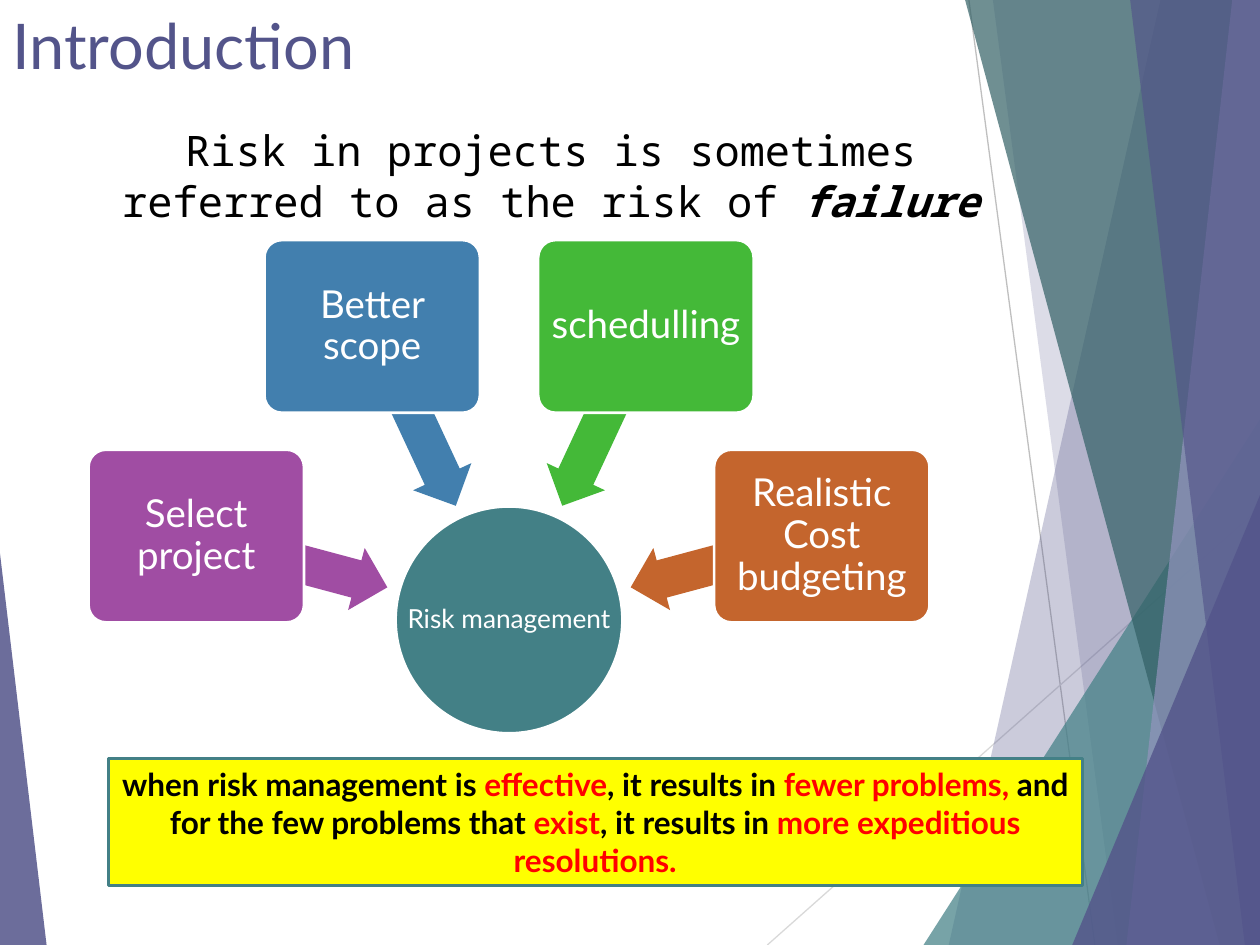
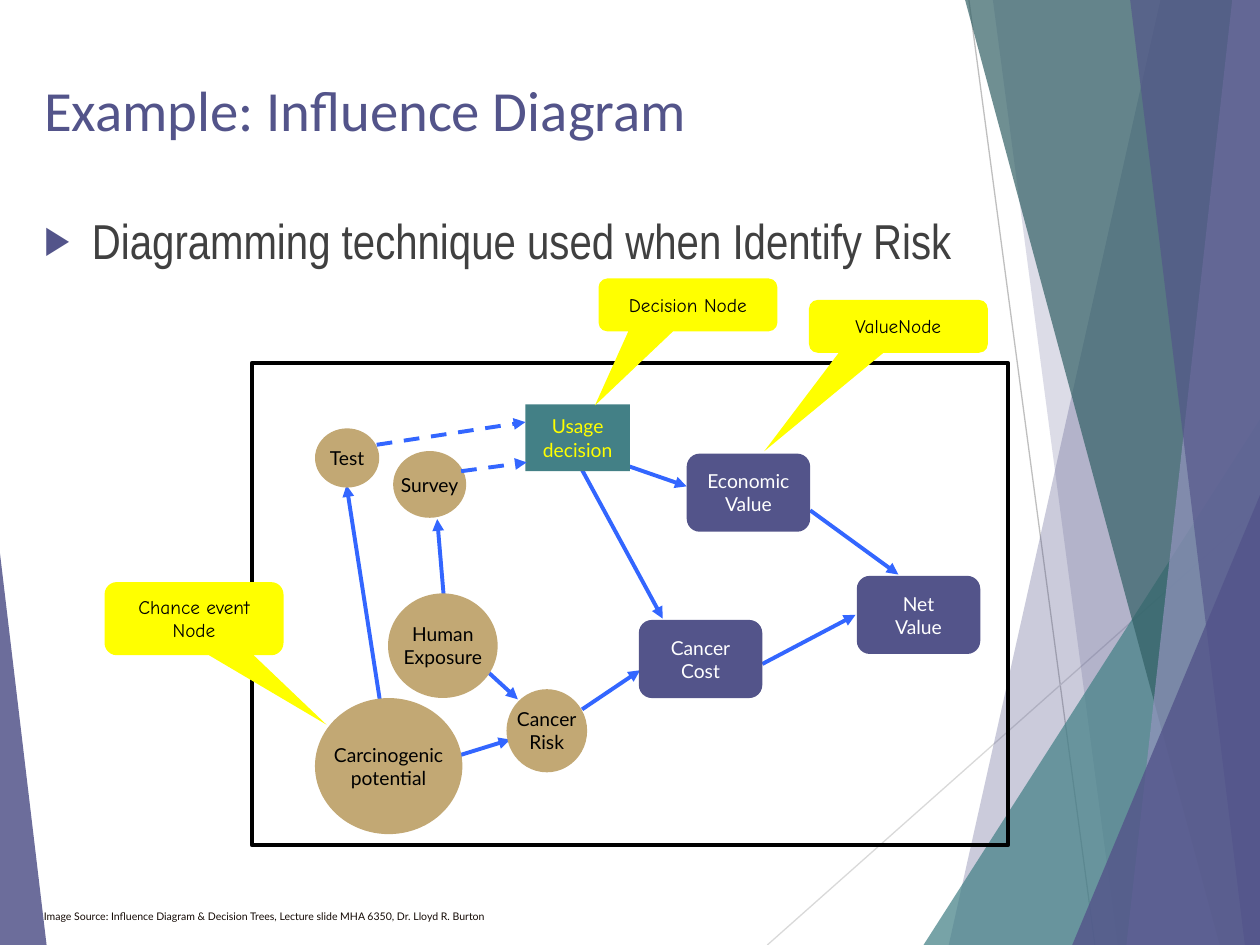
from math import cos, radians, sin

from lxml.etree import SubElement
from pptx import Presentation
from pptx.dml.color import RGBColor
from pptx.enum.dml import MSO_LINE
from pptx.enum.shapes import MSO_CONNECTOR, MSO_SHAPE
from pptx.enum.text import MSO_ANCHOR, MSO_AUTO_SIZE, PP_ALIGN
from pptx.oxml.ns import qn
from pptx.util import Inches, Pt

COLUMNS, ROWS = 100, 75

COLORS = {
    "indigo": "53548A",
    "lilac": "9394BE",
    "teal": "438086",
    "deep teal": "326065",
    "purple": "A04DA3",
    "blue": "427FAE",
    "green": "44B938",
    "orange": "C4652D",
    "tan": "C2A874",
    "yellow": "FFFF00",
    "red": "FF0000",
    "arrow blue": "3366FF",
    "black": "000000",
    "white": "FFFFFF",
    "body grey": "404040",
    "credit brown": "140A05",
    "rule grey": "BFBFBF",
    "pale grey": "D9D9D9",
}


def rgb(color):
    return RGBColor.from_string(COLORS[color])


class Deck:
    font = "Lato"

    def __init__(self):
        self.presentation = Presentation()
        self.presentation.slide_width = Inches(10)
        self.presentation.slide_height = Inches(7.5)
        self.column = self.presentation.slide_width / COLUMNS
        self.row = self.presentation.slide_height / ROWS
        self.slide = None

    def add_slide(self, layout):
        self.slide = self.presentation.slides.add_slide(
            self.presentation.slide_layouts[layout])

    def point(self, column, row):
        return round(column * self.column), round(row * self.row)

    def area(self, left, top, width, height):
        return *self.point(left, top), *self.point(width, height)

    def typeset(self, frame, paragraphs, size, color, font=None,
                align=PP_ALIGN.CENTER, anchor=MSO_ANCHOR.MIDDLE, wrap=True,
                inset=None, spacing=None):
        frame.auto_size = MSO_AUTO_SIZE.NONE
        frame.word_wrap = wrap
        frame.vertical_anchor = anchor
        if inset is not None:
            frame.margin_left = frame.margin_right = Inches(inset)
            frame.margin_top = frame.margin_bottom = Inches(inset)
        for index, runs in enumerate(paragraphs):
            paragraph = frame.add_paragraph() if index else frame.paragraphs[0]
            paragraph.alignment = align
            if spacing:
                paragraph.line_spacing = spacing
            for words, *changes in [runs] if isinstance(runs, tuple) else runs:
                look = changes[0] if changes else {}
                run = paragraph.add_run()
                run.text = words
                run.font.name = font or self.font
                run.font.size = Pt(size)
                run.font.color.rgb = rgb(look.get("color", color))
                run.font.bold = look.get("bold", False)
                run.font.italic = look.get("italic", False)

    def paint(self, shape, fill=None, outline=None, width=1.5, alpha=None):
        shape.shadow.inherit = False
        if fill:
            shape.fill.solid()
            shape.fill.fore_color.rgb = rgb(fill)
        else:
            shape.fill.background()
        if alpha:
            tint = shape.element.spPr.find(qn("a:solidFill"))[0]
            SubElement(tint, qn("a:alpha"), val=str(alpha * 1000))
        if outline:
            shape.line.color.rgb = rgb(outline)
            shape.line.width = Pt(width)
        else:
            shape.line.fill.background()
        return shape

    def shape(self, preset, area, fill=None, adjust=(), turn=0, **paint):
        shape = self.slide.shapes.add_shape(preset, *self.area(*area))
        for index, value in enumerate(adjust):
            shape.adjustments[index] = value
        shape.rotation = turn
        return self.paint(shape, fill, **paint)

    def ribbon(self, top, bottom, fill, alpha):
        builder = self.slide.shapes.build_freeform(*self.point(top, 0))
        builder.add_line_segments([
            self.point(COLUMNS, 0), self.point(COLUMNS, ROWS),
            self.point(bottom, ROWS)])
        return self.paint(builder.convert_to_shape(), fill, alpha=alpha)

    def line(self, start, end, color, width, arrow=False, dashed=False):
        line = self.slide.shapes.add_connector(
            MSO_CONNECTOR.STRAIGHT, *self.point(*start), *self.point(*end))
        line.line.color.rgb = rgb(color)
        line.line.width = Pt(width)
        if dashed:
            line.line.dash_style = MSO_LINE.DASH
        properties = line.element.spPr
        if arrow:
            SubElement(properties.find(qn("a:ln")), qn("a:tailEnd"), type="triangle")
        SubElement(properties, qn("a:effectLst"))
        return line

    def influence(self, start, end, dashed=False):
        self.line(start, end, "arrow blue", 2.25, arrow=True, dashed=dashed)

    def node(self, preset, area, words, fill, color):
        node = self.shape(preset, area, fill)
        self.typeset(node.text_frame, [(word,) for word in words], 11, color, wrap=False)

    def callout(self, area, words, tip):
        callout = self.shape(MSO_SHAPE.ROUNDED_RECTANGULAR_CALLOUT, area, "yellow",
                             adjust=(*tip, 0.167))
        self.typeset(callout.text_frame, [(words,)], 11, "black", "Comic Neue")

    def text(self, area, runs, size, color, **style):
        box = self.slide.shapes.add_textbox(*self.area(*area))
        self.typeset(box.text_frame, [runs], size, color, anchor=MSO_ANCHOR.TOP, **style)

    def place(self, holder, area, words, size, color, font):
        holder.left, holder.top, holder.width, holder.height = self.area(*area)
        self.typeset(holder.text_frame, [(words,)], size, color, font,
                     PP_ALIGN.LEFT, MSO_ANCHOR.TOP)

    def title(self, area, words, size, font=None):
        self.place(self.slide.shapes.title, area, words, size, "indigo", font)

    def bullet(self, area, words):
        body = self.slide.placeholders[1]
        self.place(body, area, words, 28, "body grey", "Arial Narrow")
        paragraph = body.text_frame.paragraphs[0]
        paragraph.space_before = Pt(10)
        properties = paragraph._p.get_or_add_pPr()
        indent = Inches(0.38)
        properties.set("marL", str(indent))
        properties.set("indent", str(-indent))
        tint = SubElement(properties, qn("a:buClr"))
        SubElement(tint, qn("a:srgbClr"), val=COLORS["indigo"])
        SubElement(properties, qn("a:buSzPct"), val="80000")
        SubElement(properties, qn("a:buChar"), char="▶")

    def backdrop(self):
        triangle = MSO_SHAPE.ISOSCELES_TRIANGLE
        parts = [
            self.line((76.9, 0), (86.9, ROWS), "rule grey", 0.75),
            self.line((COLUMNS, 40.3), (60.9, ROWS), "pale grey", 0.75),
            self.ribbon(92.1, 75.3, "indigo", 30),
            self.ribbon(78.8, 88.7, "indigo", 20),
            self.shape(triangle, (73.3, 33.3, 26.7, 41.7), "teal", (1,), alpha=72),
            self.ribbon(76.6, 96.8, "deep teal", 70),
            self.ribbon(97.8, 89.4, "lilac", 70),
            self.ribbon(89.7, 98.8, "indigo", 65),
            self.shape(triangle, (85.1, 39.3, 14.9, 35.7), "indigo", (1,), alpha=80),
            self.shape(triangle, (0, 43.9, 3.7, 31.1), "indigo", (0,), alpha=85),
        ]
        master_tree = self.presentation.slide_master.shapes.element
        for index, part in enumerate(parts):
            part.element.xpath(".//p:cNvPr")[0].set("id", str(100 + index))
            master_tree.insert(2 + index, part.element)


def introduction(deck):
    deck.title((0, 0, 70.5, 14.4), "Introduction", 36)
    hub_x, hub_y, hub_size = 40.4, 49.2, 18

    def around(angle, radius, width, height):
        return (hub_x + radius * cos(radians(angle)) - width / 2,
                hub_y + radius * sin(radians(angle)) - height / 2, width, height)

    hub = deck.shape(MSO_SHAPE.OVAL, around(0, 0, hub_size, hub_size), "teal",
                     outline="white")
    deck.typeset(hub.text_frame, [("Risk management",)], 15, "white", wrap=False,
                 inset=0.01, spacing=0.9)
    factors = [("Select project", "purple"), ("Better scope", "blue"),
               ("schedulling", "green"), ("Realistic Cost budgeting", "orange")]
    for index, (factor, color) in enumerate(factors):
        angle = 195 + 50 * index
        deck.shape(MSO_SHAPE.LEFT_ARROW, around(angle, 17.85, 15.7, 5.1), color,
                   (0.6, 0.5), angle)
        card = deck.shape(MSO_SHAPE.ROUNDED_RECTANGLE, around(angle, 25.7, 17.1, 13.7),
                          color, (0.1,), outline="white")
        deck.typeset(card.text_frame, [(factor,)], 22, "white", inset=0.02, spacing=0.9)

    plain = {"bold": True}
    stressed = {"bold": True, "color": "red"}
    conclusion = deck.shape(MSO_SHAPE.RECTANGLE, (8.6, 60.2, 77.3, 10.1), "yellow",
                            outline="teal")
    deck.typeset(conclusion.text_frame, [[
        ("when risk management is ", plain), ("effective", stressed),
        (", it results in ", plain), ("fewer problems, ", stressed),
        ("and for the few problems that ", plain), ("exist", stressed),
        (", it results in ", plain), ("more expeditious resolutions.", stressed),
    ]], 18, "black")
    deck.text((6.2, 9.4, 75, 9.1), [
        ("Risk in projects is sometimes referred to as the risk of ",),
        ("failure", {"bold": True, "italic": True}),
    ], 24, "black", font="Noto Sans Mono")


def influence_diagram(deck):
    deck.title((2.5, 5.4, 97.5, 5), "Example: Influence Diagram", 32.4, "Calibri")
    deck.bullet((2.5, 16.2, 83.3, 12.5), "Diagramming technique used when Identify Risk")
    deck.text((2.5, 71.7, 88.3, 2),
              ("Image Source: Influence Diagram & Decision Trees, "
               "Lecture slide MHA 6350, Dr. Lloyd R. Burton",),
              6, "credit brown", align=PP_ALIGN.LEFT)

    for start, end in [
        ((35, 60.4), (40.5, 58.7)), ((38.8, 53.4), (41.1, 55.5)),
        ((35.3, 48.3), (34.7, 41.2)), ((30.4, 57.2), (27.5, 38.5)),
        ((64.3, 40.5), (71.3, 45.6)), ((46.2, 37.3), (52.6, 49.1)),
        ((49.6, 36.9), (54.5, 38.6)), ((60.5, 52.7), (67.9, 48.8)),
        ((46.2, 56.3), (50.8, 53.2)),
    ]:
        deck.influence(start, end)
    deck.shape(MSO_SHAPE.RECTANGLE, (20, 28.8, 60, 38.3), outline="black", width=2.25)

    deck.node(MSO_SHAPE.RECTANGLE, (41.7, 32.1, 8.3, 5.3), ["Usage", "decision"],
              "teal", "yellow")
    for left, top, *words in [(54.5, 36, "Economic", "Value"),
                              (50.7, 49.2, "Cancer", "Cost"),
                              (68, 45.7, "Net", "Value")]:
        deck.node(MSO_SHAPE.FLOWCHART_ALTERNATE_PROCESS, (left, top, 9.8, 6.2), words,
                  "indigo", "white")
    for area, *words in [((40.2, 54.7, 6.4, 6.6), "Cancer", "Risk"),
                         ((30.8, 47.1, 8.7, 8.3), "Human", "Exposure"),
                         ((25, 55.4, 11.7, 10.8), "Carcinogenic", "potential"),
                         ((31.2, 35.8, 5.8, 5.3), "Survey"),
                         ((25, 34, 5.1, 4.7), "Test")]:
        deck.node(MSO_SHAPE.OVAL, area, words, "tan", "black")

    deck.influence((29.9, 35.3), (41.7, 33.5), dashed=True)
    deck.influence((36.6, 37.4), (41.8, 36.7), dashed=True)
    deck.callout((47.5, 22.1, 14.2, 4.2), "Decision Node", (-0.52, 1.9))
    deck.callout((64.2, 23.8, 14.2, 4.2), "ValueNode", (-0.75, 2.36))
    deck.callout((8.3, 46.2, 14.2, 5.8), "Chance event Node", (0.74, 1.45))


def main():
    deck = Deck()
    deck.add_slide(5)
    deck.backdrop()
    introduction(deck)
    deck.add_slide(1)
    influence_diagram(deck)
    deck.presentation.save("out.pptx")


if __name__ == "__main__":
    main()
